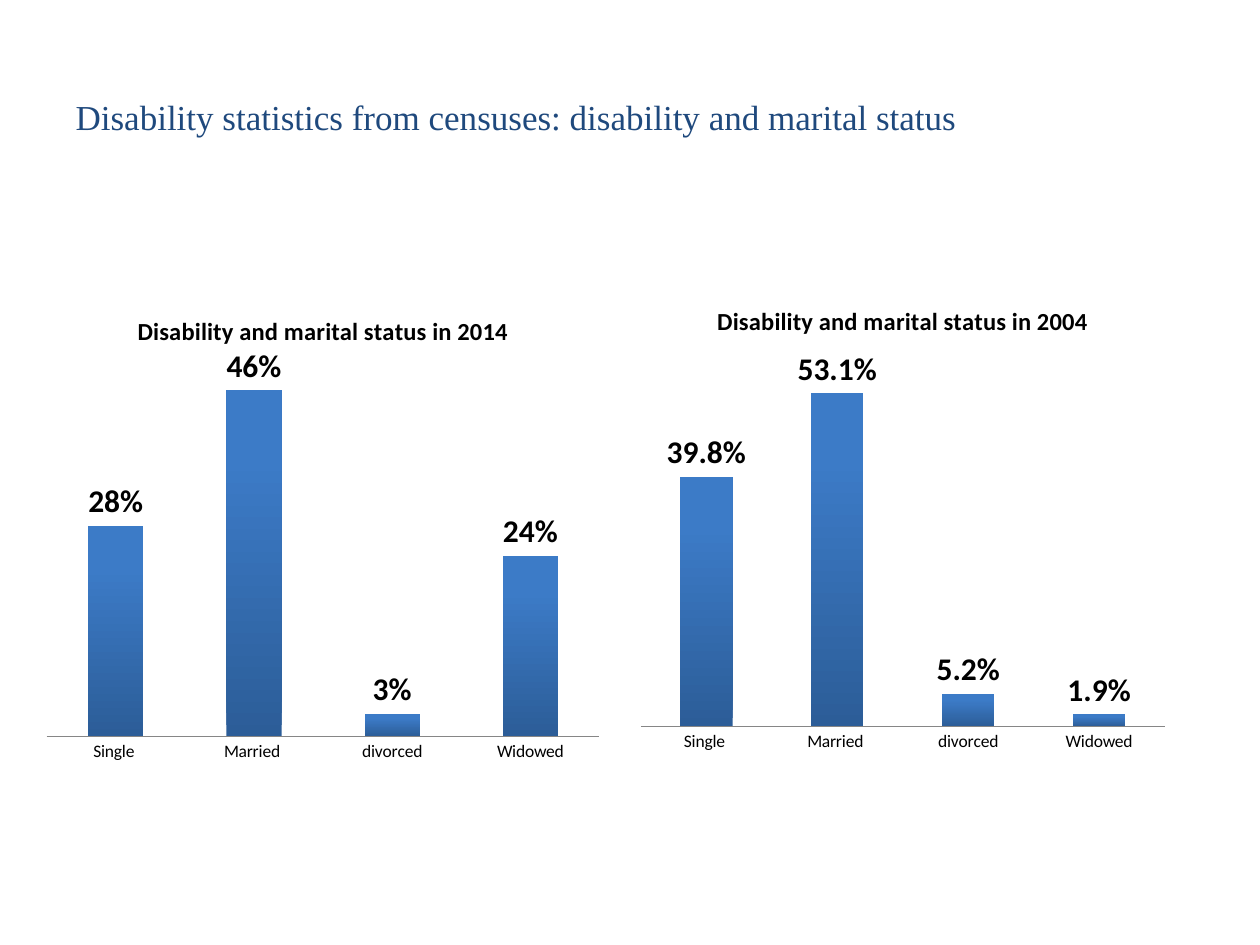
from lxml import etree
from pptx import Presentation
from pptx.chart.data import CategoryChartData
from pptx.dml.color import RGBColor
from pptx.enum.chart import XL_CHART_TYPE as Chart, XL_LABEL_POSITION as LabelPos
from pptx.enum.chart import XL_TICK_LABEL_POSITION as TickLabels, XL_TICK_MARK as Tick
from pptx.enum.text import MSO_ANCHOR, PP_ALIGN
from pptx.oxml import parse_xml
from pptx.oxml.ns import nsdecls, qn
from pptx.util import Inches, Pt

TITLE = "Disability statistics from censuses: disability and marital status"
STATUSES = ["Single ", "Married ", "divorced", "Widowed"]
CHARTS = [
    {"title": "Disability and marital status in 2014", "box": (0.28, 2.33, 4.57, 3.78),
     "values": [0.28, 0.46, 0.03, 0.24], "format": "0%", "max": 0.5},
    {"title": "Disability and marital status in 2004", "box": (5, 2.25, 4.33, 3.78),
     "values": [0.398, 0.531, 0.052, 0.019], "format": "0.0%", "max": 0.6},
]
PLOT_AREA = {"x": 0.02, "y": 0.14, "w": 0.96, "h": 0.79}
COLORS = {"title": "1F497D", "text": "000000", "axis": "868686",
          "bar_bottom": "2C5D98", "bar_top": "3C7BC7"}


def color(name):
    return RGBColor.from_string(COLORS[name])


def style_font(font, size, bold=False, name="Calibri", fill="text"):
    font.size, font.bold, font.name = Pt(size), bold, name
    font.color.rgb = color(fill)


def set_plot_area(chart):
    """Fix the inner plot area as fractions of the chart frame."""
    plot_area = chart.plots[0]._element.getparent()
    for old in plot_area.findall(qn("c:layout")):
        plot_area.remove(old)
    layout = parse_xml(f'<c:layout {nsdecls("c")}><c:manualLayout/></c:layout>')
    settings = {"layoutTarget": "inner", "xMode": "edge", "yMode": "edge", **PLOT_AREA}
    for tag, value in settings.items():
        etree.SubElement(layout[0], qn(f"c:{tag}")).set("val", str(value))
    plot_area.insert(0, layout)


def add_status_chart(slide, item):
    data = CategoryChartData(number_format=item["format"])
    data.categories = STATUSES
    data.add_series("Series 1", item["values"])
    box = [Inches(v) for v in item["box"]]
    chart = slide.shapes.add_chart(Chart.COLUMN_CLUSTERED, *box, data).chart
    chart.has_legend = False
    style_font(chart.font, 10)

    chart.has_title = True
    r = chart.chart_title.text_frame.paragraphs[0].add_run()
    r.text = item["title"]
    style_font(r.font, 14, bold=True)
    chart.chart_title.include_in_layout = False
    set_plot_area(chart)

    cat_axis, val_axis = chart.category_axis, chart.value_axis
    cat_axis.major_tick_mark = Tick.NONE
    cat_axis.tick_label_position = TickLabels.NEXT_TO_AXIS
    cat_axis.format.line.color.rgb = color("axis")
    val_axis.minimum_scale, val_axis.maximum_scale = 0, item["max"]
    val_axis.has_major_gridlines = False
    val_axis.visible = False

    plot = chart.plots[0]
    plot.gap_width = 150
    plot.vary_by_categories = False
    series = plot.series[0]
    fill = series.format.fill
    fill.gradient()
    fill.gradient_angle = 90
    for stop, position, name in zip(fill.gradient_stops, (0, 0.8), ("bar_bottom", "bar_top")):
        stop.position = position
        stop.color.rgb = color(name)

    labels = series.data_labels
    labels.show_value = True
    labels.position = LabelPos.OUTSIDE_END
    labels.number_format = item["format"]
    labels.number_format_is_linked = False
    style_font(labels.font, 18, bold=True)


def main():
    prs = Presentation()
    prs.slide_width, prs.slide_height = Inches(10), Inches(7.5)
    slide = prs.slides.add_slide(prs.slide_layouts[5])

    title = slide.shapes.title
    title.left, title.top, title.width, title.height = map(Inches, (0.5, 0.3, 9, 1.25))
    tf = title.text_frame
    tf.vertical_anchor = MSO_ANCHOR.MIDDLE
    p = tf.paragraphs[0]
    p.alignment = PP_ALIGN.LEFT
    r = p.add_run()
    r.text = TITLE
    style_font(r.font, 20, name="Times New Roman", fill="title")

    for item in CHARTS:
        add_status_chart(slide, item)
    prs.save("out.pptx")


if __name__ == "__main__":
    main()
